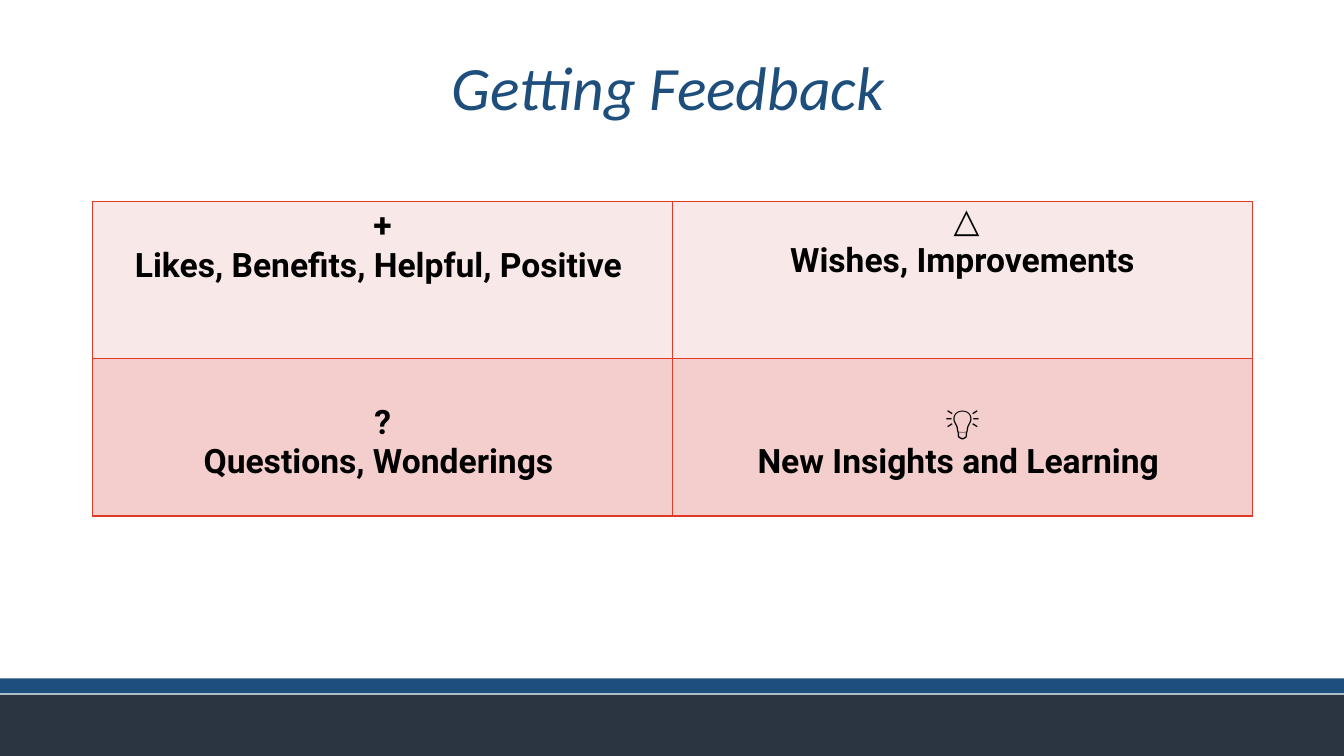
import pptx
import pptx.util
import pptx.dml.color
import pptx.enum.shapes
import pptx.enum.text
import pptx.oxml
import pptx.oxml.ns

Inches = pptx.util.Inches
Pt = pptx.util.Pt
RGBColor = pptx.dml.color.RGBColor
CENTER = pptx.enum.text.PP_ALIGN.CENTER

NAVY = RGBColor(0x1D, 0x4E, 0x7C)
SLATE = RGBColor(0x2B, 0x35, 0x41)
BLACK = RGBColor(0, 0, 0)
PALE_PINK = RGBColor(0xF9, 0xE8, 0xE8)
PINK = RGBColor(0xF3, 0xCE, 0xCD)
RED = RGBColor(0xE0, 0x39, 0x28)

HEADING = "Getting Feedback"
QUADRANTS = [
    [("+", "Likes, Benefits, Helpful, Positive "), (" △", "Wishes, Improvements")],
    [("?", "Questions, Wonderings "), ("💡", "New Insights and Learning ")],
]
ROW_FILLS = [PALE_PINK, PINK]
TOP_MARGINS = [[0.05, 0], [0.44, 0.44]]
FOOTER_BANDS = [(6.89, 0.61, SLATE), (6.73, 0.15, NAVY)]
SLIDE_WIDTH, SLIDE_HEIGHT = 13.33, 7.5
COLUMN_WIDTH, ROW_HEIGHT = 5.75, 1.56


def add_text(paragraph, text, font_name, size, color, bold=False, italic=False):
    paragraph.alignment = CENTER
    run = paragraph.add_run()
    run.text = text
    run.font.name = font_name
    run.font.size = Pt(size)
    run.font.color.rgb = color
    run.font.bold = bold
    run.font.italic = italic


def add_borders(cell):
    properties = cell._tc.get_or_add_tcPr()
    for position, side in enumerate(("lnL", "lnR", "lnT", "lnB")):
        border = pptx.oxml.parse_xml(
            f'<a:{side} {pptx.oxml.ns.nsdecls("a")} w="{Pt(1)}">'
            f'<a:solidFill><a:srgbClr val="{RED}"/></a:solidFill></a:{side}>')
        properties.insert(position, border)


def add_footer(slide):
    for top, height, color in FOOTER_BANDS:
        band = slide.shapes.add_shape(
            pptx.enum.shapes.MSO_SHAPE.RECTANGLE,
            0, Inches(top), Inches(SLIDE_WIDTH), Inches(height))
        band.shadow.inherit = False
        band.fill.solid()
        band.fill.fore_color.rgb = color
        band.line.fill.background()


def add_heading(slide):
    heading = slide.shapes.title
    heading.left, heading.top = Inches(0.82), Inches(0.2)
    heading.width, heading.height = Inches(11.62), Inches(1.4)
    heading.text_frame.vertical_anchor = pptx.enum.text.MSO_ANCHOR.MIDDLE
    paragraph = heading.text_frame.paragraphs[0]
    paragraph.line_spacing = 0.9
    add_text(paragraph, HEADING, "Calibri", 44, NAVY, italic=True)


def add_quadrants(slide):
    rows, columns = len(QUADRANTS), len(QUADRANTS[0])
    grid = slide.shapes.add_table(
        rows, columns, Inches(0.92), Inches(2),
        Inches(columns * COLUMN_WIDTH), Inches(rows * ROW_HEIGHT)).table
    for row, quadrants in enumerate(QUADRANTS):
        for column, lines in enumerate(quadrants):
            cell = grid.cell(row, column)
            cell.margin_top = Inches(TOP_MARGINS[row][column])
            cell.fill.solid()
            cell.fill.fore_color.rgb = ROW_FILLS[row]
            add_borders(cell)
            for index, line in enumerate(lines):
                frame = cell.text_frame
                paragraph = frame.add_paragraph() if index else frame.paragraphs[0]
                add_text(paragraph, line, "Roboto", 24, BLACK, bold=True)


def main():
    deck = pptx.Presentation()
    deck.slide_width = Inches(SLIDE_WIDTH)
    deck.slide_height = Inches(SLIDE_HEIGHT)
    slide = deck.slides.add_slide(deck.slide_layouts[5])
    add_footer(slide)
    add_heading(slide)
    add_quadrants(slide)
    deck.save("out.pptx")


if __name__ == "__main__":
    main()
